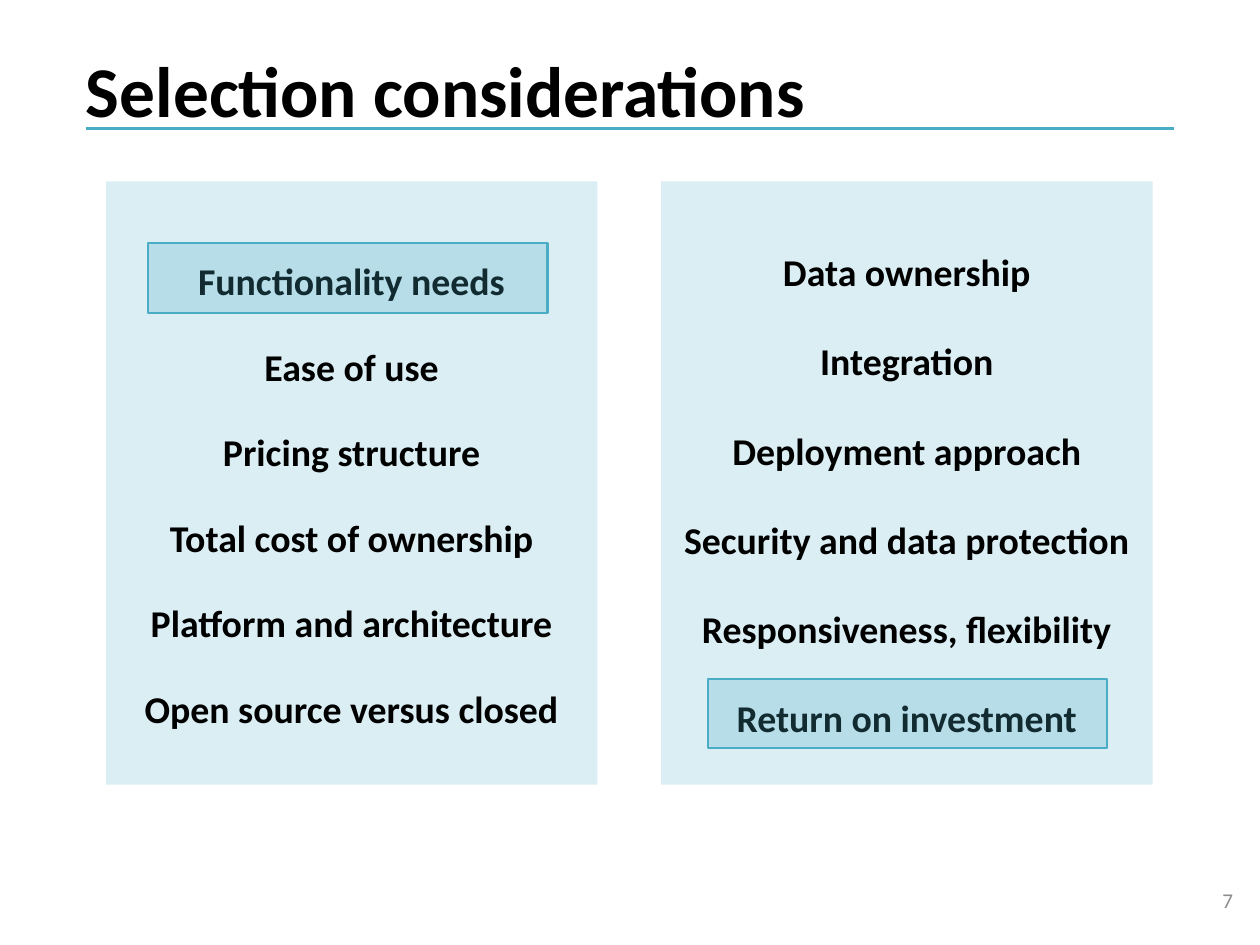
import pptx
import pptx.dml.color
import pptx.enum.shapes
import pptx.enum.text
import pptx.oxml
import pptx.oxml.ns
import pptx.util
from pptx.util import Inches

RGBColor = pptx.dml.color.RGBColor
PP_ALIGN = pptx.enum.text.PP_ALIGN

BLACK = RGBColor(0x00, 0x00, 0x00)
GRAY = RGBColor(0x8C, 0x8C, 0x8C)
TEAL = RGBColor(0x4B, 0xAC, 0xC6)
PALE_TEAL = RGBColor(0xDB, 0xEE, 0xF4)

PANEL_TOP, PANEL_WIDTH, PANEL_HEIGHT = 1.2, 3.25, 3.99
HIGHLIGHT_WIDTH, HIGHLIGHT_HEIGHT = 2.64, 0.46


def write_text(text_frame, text, size=18, color=BLACK, bold=False,
               align=PP_ALIGN.LEFT, line_spacing=1.0, space_before=0):
    """Write one paragraph per line of text, centred vertically."""
    text_frame.word_wrap = True
    text_frame.vertical_anchor = pptx.enum.text.MSO_ANCHOR.MIDDLE
    for index, line in enumerate(text.split("\n")):
        paragraph = text_frame.add_paragraph() if index else text_frame.paragraphs[0]
        paragraph.alignment = align
        paragraph.line_spacing = line_spacing
        paragraph.space_before = pptx.util.Pt(space_before if index else 0)
        run = paragraph.add_run()
        run.text = line
        run.font.name = "Calibri"
        run.font.size = pptx.util.Pt(size)
        run.font.bold = bold
        run.font.color.rgb = color


class SlideBuilder:
    def __init__(self, presentation):
        self.slide = presentation.slides.add_slide(presentation.slide_layouts[6])
        self.shapes = self.slide.shapes

    def text_box(self, left, top, width, height, text, **text_format):
        shape = self.shapes.add_textbox(
            Inches(left), Inches(top), Inches(width), Inches(height))
        write_text(shape.text_frame, text, **text_format)

    def rectangle(self, left, top, width, height, fill):
        shape = self.shapes.add_shape(
            pptx.enum.shapes.MSO_SHAPE.RECTANGLE,
            Inches(left), Inches(top), Inches(width), Inches(height))
        shape.shadow.inherit = False
        shape.fill.solid()
        shape.fill.fore_color.rgb = fill
        shape.line.fill.background()
        return shape

    def panel(self, left, items, space_before):
        shape = self.rectangle(left, PANEL_TOP, PANEL_WIDTH, PANEL_HEIGHT, PALE_TEAL)
        write_text(shape.text_frame, "\n".join(items), bold=True,
                   align=PP_ALIGN.CENTER, line_spacing=1.5, space_before=space_before)

    def highlight(self, left, top):
        shape = self.rectangle(left, top, HIGHLIGHT_WIDTH, HIGHLIGHT_HEIGHT, TEAL)
        color = shape.fill._xPr.find(".//" + pptx.oxml.ns.qn("a:srgbClr"))
        color.append(pptx.oxml.parse_xml(
            f'<a:alpha {pptx.oxml.ns.nsdecls("a")} val="25000"/>'))
        shape.line.color.rgb = TEAL
        shape.line.width = pptx.util.Pt(1)

    def rule(self, left, right, y):
        connector = self.shapes.add_connector(
            pptx.enum.shapes.MSO_CONNECTOR.STRAIGHT,
            Inches(left), Inches(y), Inches(right), Inches(y))
        connector.line.color.rgb = TEAL
        connector.line.width = pptx.util.Pt(1.5)
        connector._element.spPr.append(pptx.oxml.parse_xml(
            f'<a:effectLst {pptx.oxml.ns.nsdecls("a")}/>'))


def main():
    presentation = pptx.Presentation()
    presentation.slide_width = Inches(8.33)
    presentation.slide_height = Inches(6.25)
    builder = SlideBuilder(presentation)

    # Title, rule and slide number
    builder.rule(0.57, 7.76, 0.85)
    builder.text_box(0.47, 0.23, 7.19, 0.79, "Selection considerations",
                     size=34, bold=True, line_spacing=0.9)
    builder.text_box(6.37, 5.79, 1.88, 0.33, "7",
                     size=10, color=GRAY, align=PP_ALIGN.RIGHT)

    # Two panels of considerations
    builder.panel(0.7, ["Functionality needs", "Ease of use", "Pricing structure",
                        "Total cost of ownership", "Platform and architecture",
                        "Open source versus closed"], space_before=8.3)
    builder.panel(4.37, ["Data ownership", "Integration", "Deployment approach",
                         "Security and data protection",
                         "Responsiveness, flexibility",
                         "Return on investment"], space_before=10)

    # Highlights over the first and last considerations
    builder.highlight(0.98, 1.61)
    builder.highlight(4.68, 4.49)

    presentation.save("out.pptx")


if __name__ == "__main__":
    main()
